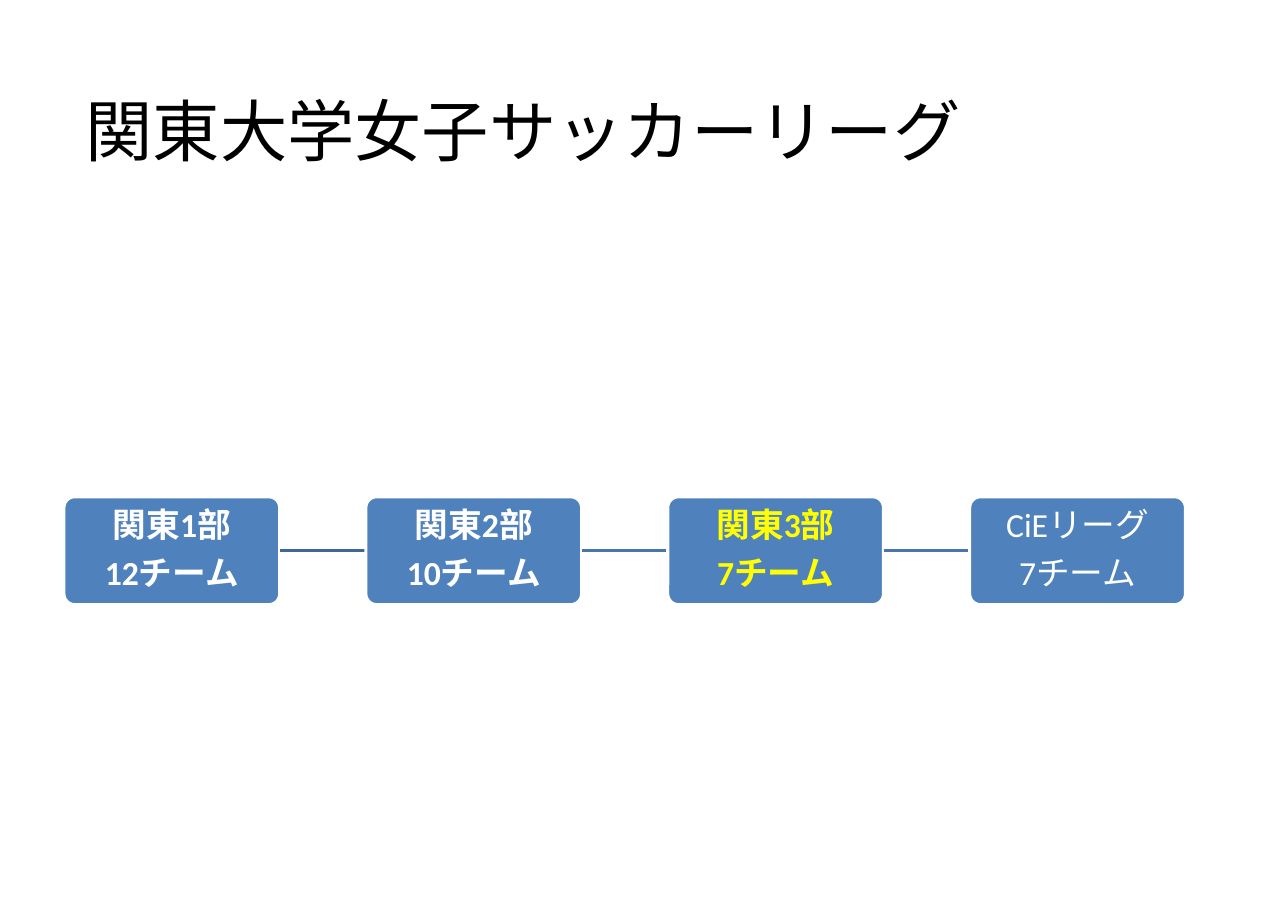
from dataclasses import dataclass

from lxml import etree
from pptx import Presentation
from pptx.dml.color import RGBColor
from pptx.enum.shapes import MSO_CONNECTOR, MSO_SHAPE
from pptx.enum.text import MSO_ANCHOR, PP_ALIGN
from pptx.oxml.ns import qn
from pptx.util import Pt

ROUNDED = MSO_SHAPE.ROUNDED_RECTANGLE
STRAIGHT = MSO_CONNECTOR.STRAIGHT
MIDDLE = MSO_ANCHOR.MIDDLE
CENTER = PP_ALIGN.CENTER
LEFT_SIDE, RIGHT_SIDE = 1, 3


@dataclass(frozen=True)
class Theme:
    font: str = "Calibri"
    title_size: float = 44
    league_size: float = 22
    line_width: float = 2
    black: str = "000000"
    white: str = "FFFFFF"
    yellow: str = "FFFF00"
    blue: str = "4F81BD"
    dark_link: str = "3F6797"
    link: str = "4875AC"


class SlideBuilder:
    def __init__(self, page, theme):
        self.page = page
        self.theme = theme

    def fill_text(self, box, lines, size, color, bold=False, margins=(0, 0), para_format=None):
        frame = box.text_frame
        side, end = map(Pt, margins)
        frame_format = {
            "word_wrap": True, "vertical_anchor": MIDDLE,
            "margin_left": side, "margin_right": side,
            "margin_top": end, "margin_bottom": end,
        }
        for name, value in frame_format.items():
            setattr(frame, name, value)
        frame.text = "\n".join(lines)
        for para in frame.paragraphs:
            for name, value in {"alignment": CENTER, **(para_format or {})}.items():
                setattr(para, name, value)
            span = para.runs[0]
            font_format = {"name": self.theme.font, "size": Pt(size), "bold": bold}
            for name, value in font_format.items():
                setattr(span.font, name, value)
            span.font.color.rgb = RGBColor.from_string(color)

    def style_line(self, line, color):
        line.color.rgb = RGBColor.from_string(color)
        line.width = Pt(self.theme.line_width)

    def title(self, text, left, top, width, height):
        box = self.page.shapes.add_textbox(Pt(left), Pt(top), Pt(width), Pt(height))
        self.fill_text(box, [text], self.theme.title_size, self.theme.black, margins=(8, 4))

    def league(self, lines, left, top, width, height, color, bold):
        box = self.page.shapes.add_shape(ROUNDED, Pt(left), Pt(top), Pt(width), Pt(height))
        box.adjustments[0] = 0.1
        box.shadow.inherit = False
        box.fill.solid()
        box.fill.fore_color.rgb = RGBColor.from_string(self.theme.blue)
        self.style_line(box.line, self.theme.white)
        spacing = {"line_spacing": 0.9, "space_after": Pt(0.35 * self.theme.league_size)}
        self.fill_text(box, lines, self.theme.league_size, color, bold, (3.6, 3.6), spacing)
        return box

    def link_from(self, box, color):
        middle = box.top + box.height // 2
        right = box.left + box.width
        link = self.page.shapes.add_connector(STRAIGHT, right, middle, right, middle)
        link.begin_connect(box, RIGHT_SIDE)
        self.style_line(link.line, color)
        etree.SubElement(link._element.spPr, qn("a:effectLst"))
        return link


def main():
    deck = Presentation()
    deck.slide_width, deck.slide_height = Pt(841.68), Pt(595.44)
    theme = Theme()
    builder = SlideBuilder(deck.slides.add_slide(deck.slide_layouts[6]), theme)

    # Title
    builder.title("関東大学女子サッカーリーグ", 23.8, 48.2, 636.5, 73.4)

    # Leagues from left to right: lines, text colour, bold, colour of the link that follows
    leagues = [
        (["関東1部", "12チーム"], theme.white, True, theme.dark_link),
        (["関東2部", "10チーム"], theme.white, True, theme.link),
        (["関東3部", "7チーム"], theme.yellow, True, theme.link),
        (["CiEリーグ", "7チーム"], theme.white, False, None),
    ]
    first_left, top, width, height, gap = 41.8, 324.7, 141, 70.5, 56.3

    # Each link lies above the box it leaves and below the box it reaches
    link = None
    for index, (lines, color, bold, link_color) in enumerate(leagues):
        left = first_left + index * (width + gap)
        box = builder.league(lines, left, top, width, height, color, bold)
        if link:
            link.end_connect(box, LEFT_SIDE)
        if link_color:
            link = builder.link_from(box, link_color)

    deck.save("out.pptx")


if __name__ == "__main__":
    main()
